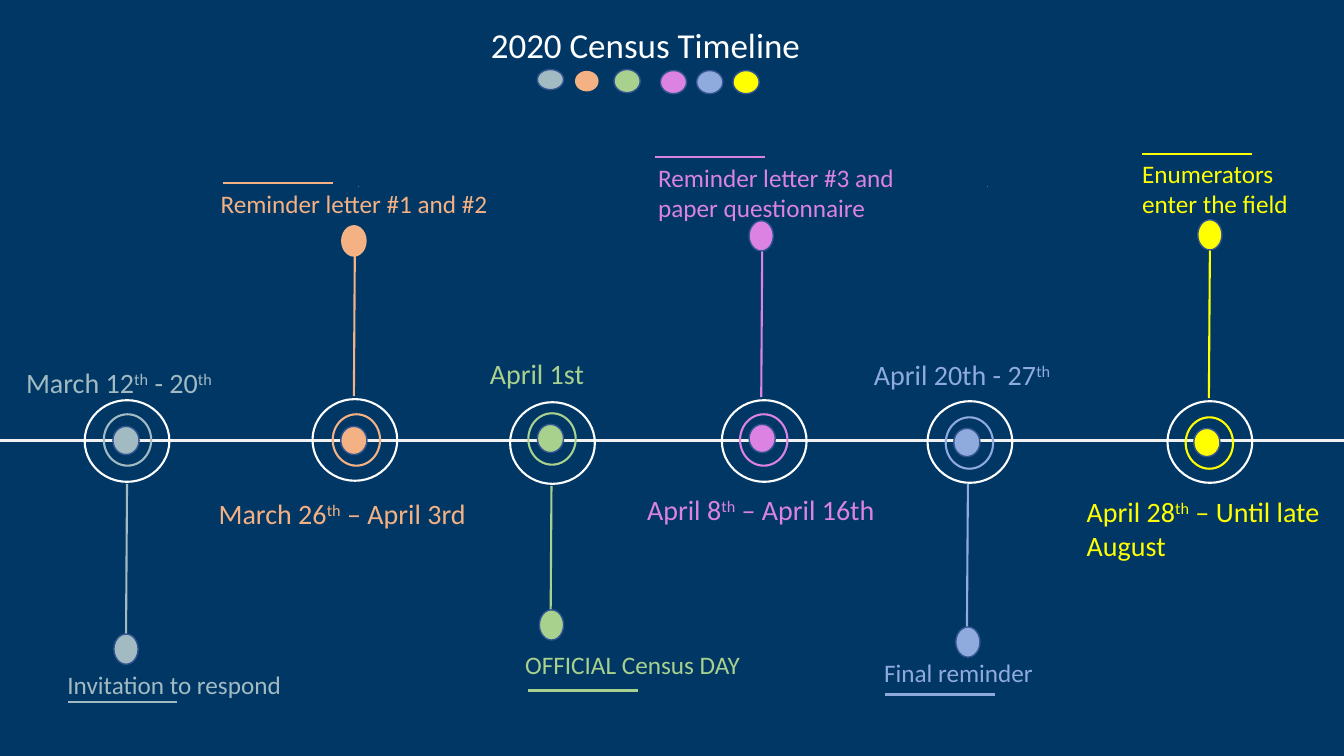
from dataclasses import dataclass
from typing import NamedTuple

from lxml import etree
from pptx import Presentation
from pptx.dml.color import RGBColor
from pptx.enum.shapes import MSO_CONNECTOR, MSO_SHAPE
from pptx.enum.text import MSO_AUTO_SIZE, PP_ALIGN
from pptx.oxml.ns import qn
from pptx.util import Inches, Pt

ELLIPSE, ARC = MSO_SHAPE.OVAL, MSO_SHAPE.ARC
STRAIGHT = MSO_CONNECTOR.STRAIGHT
GROW = MSO_AUTO_SIZE.SHAPE_TO_FIT_TEXT
LEFT, CENTER = PP_ALIGN.LEFT, PP_ALIGN.CENTER

NAVY = RGBColor(0x01, 0x37, 0x65)
WHITE = RGBColor(0xFF, 0xFF, 0xFF)
PALE = RGBColor(0xF2, 0xF2, 0xF2)
OUTLINE = RGBColor(0x32, 0x54, 0x91)
ARC_BLUE = RGBColor(0x44, 0x72, 0xC4)
GREY = RGBColor(0xA2, 0xBB, 0xC2)
PEACH = RGBColor(0xF4, 0xB1, 0x83)
GREEN = RGBColor(0xA9, 0xD1, 0x8E)
PINK = RGBColor(0xDB, 0x82, 0xE2)
PERIWINKLE = RGBColor(0x8F, 0xAA, 0xDC)
YELLOW = RGBColor(0xFF, 0xFF, 0x00)

COLUMNS, ROWS = 133.3, 75
SLIDE_WIDTH, SLIDE_HEIGHT = Inches(13.33), Inches(7.5)
COLUMN, ROW = SLIDE_WIDTH / COLUMNS, SLIDE_HEIGHT / ROWS


class Point(NamedTuple):
    column: float
    row: float


class Area(NamedTuple):
    column: float
    row: float
    columns: float
    rows: float


class Size(NamedTuple):
    columns: float
    rows: float


RING, BAND, CORE, PIN = Size(8.4, 8.1), Size(4.7, 5.1), Size(2.6, 2.8), Size(2.4, 3)
STEM, ACCENT = Size(-0.1, 15), Size(10.9, 0)
AXIS_ROW = 43.7


@dataclass(frozen=True)
class Milestone:
    """One date on the axis; text between carets is superscript."""
    colour: RGBColor
    ring: Point
    band: Point
    core: Point
    stem: Point
    pin: Point
    accent: Point
    date: str
    date_area: Area
    event: str
    event_area: Area
    legend_dot: Area
    dot_outline: RGBColor = OUTLINE


MILESTONES = [
    Milestone(GREY, Point(8.4, 39.7), Point(10.3, 41.1), Point(11.2, 42.3),
              Point(12.6, 48), Point(11.3, 62.9), Point(6.7, 69.6),
              "March 12^th^ - 20^th", Area(1.6, 35.8, 38.7, 4.4),
              "Invitation to respond", Area(5.7, 65.9, 25.3, 4),
              Area(53.3, 6.9, 2.6, 2)),
    Milestone(PEACH, Point(31, 39.6), Point(33, 41.1), Point(33.8, 42.3),
              Point(35.2, 24.3), Point(33.9, 22.4), Point(22.1, 18.2),
              "March 26^th^ – April 3rd", Area(20.7, 48.8, 38.3, 4.4),
              "Reminder letter #1 and #2", Area(20.9, 18.2, 41.4, 4),
              Area(57.1, 7.1, 2.2, 1.9), PEACH),
    Milestone(GREEN, Point(50.6, 39.9), Point(52.4, 41), Point(53.3, 42.1),
              Point(54.7, 48.2), Point(53.5, 60.5), Point(52.4, 68.5),
              "April 1st", Area(47.6, 34.9, 43.9, 4.4),
              "OFFICIAL Census DAY", Area(51.1, 63.9, 48.2, 4),
              Area(60.9, 6.9, 2.6, 2.3)),
    Milestone(PINK, Point(71.6, 39.7), Point(73.4, 41.1), Point(74.3, 42.1),
              Point(75.6, 24.4), Point(74.3, 21.9), Point(65, 15.6),
              "April 8^th^ – April 16th", Area(63.2, 48.4, 37.6, 4.4),
              "Reminder letter #3 and paper questionnaire", Area(64.3, 15.6, 25.6, 7.1),
              Area(65.5, 7, 2.6, 2.3)),
    Milestone(PERIWINKLE, Point(92, 39.8), Point(93.8, 41.4), Point(94.6, 42.5),
              Point(96, 48), Point(94.8, 62.2), Point(87.8, 68.9),
              "April 20th - 27^th", Area(85.7, 35, 38.7, 4.4),
              "Final reminder", Area(86.7, 64.7, 25.3, 4),
              Area(69.1, 7, 2.6, 2.3)),
    Milestone(YELLOW, Point(115.8, 39.8), Point(117.6, 41.4), Point(118.4, 42.5),
              Point(120, 24.5), Point(118.8, 21.8), Point(113.3, 15.3),
              "April 28^th^ – Until late August", Area(106.8, 48.6, 25.9, 7.7),
              "Enumerators enter the field", Area(112.3, 15.2, 19.6, 7.1),
              Area(72.7, 7, 2.6, 2.3)),
]
ARC_AREAS = [Area(column, 18.5, 8, 4.7) for column in (31.5, 65.1, 93.9)]


def to_lengths(area: Area) -> tuple[int, int, int, int]:
    return (round(area.column * COLUMN), round(area.row * ROW),
            round(area.columns * COLUMN), round(area.rows * ROW))


def add_outline(page, kind, area: Area, line: RGBColor, width: float, fill=None):
    shape = page.shapes.add_shape(kind, *to_lengths(area))
    shape.shadow.inherit = False
    if fill is None:
        shape.fill.background()
    else:
        shape.fill.solid()
        shape.fill.fore_color.rgb = fill
    shape.line.color.rgb = line
    shape.line.width = Pt(width)
    return shape


def add_line(page, start: Point, size: Size, colour: RGBColor) -> None:
    left, top, width, height = to_lengths(Area(*start, *size))
    line = page.shapes.add_connector(STRAIGHT, left, top, left + width, top + height)
    line.line.color.rgb = colour
    line.line.width = Pt(1.5)
    etree.SubElement(line._element.spPr, qn("a:effectLst"))


def add_label(page, text: str, area: Area, size: float, colour: RGBColor,
              alignment=LEFT) -> None:
    box = page.shapes.add_textbox(*to_lengths(area))
    for name, value in {"word_wrap": True, "auto_size": GROW}.items():
        setattr(box.text_frame, name, value)
    para = box.text_frame.paragraphs[0]
    para.alignment = alignment
    for index, part in enumerate(text.split("^")):
        span = para.add_run()
        span.text = part
        for name, value in {"name": "Calibri", "size": Pt(size)}.items():
            setattr(span.font, name, value)
        span.font.color.rgb = colour
        if index % 2:
            span._r.get_or_add_rPr().set("baseline", "30000")


def add_milestone(page, item: Milestone) -> None:
    add_outline(page, ELLIPSE, Area(*item.band, *BAND), item.colour, 1.5)
    add_outline(page, ELLIPSE, Area(*item.core, *CORE), OUTLINE, 1, item.colour)
    add_outline(page, ELLIPSE, Area(*item.ring, *RING), WHITE, 1.5)
    add_line(page, item.stem, STEM, item.colour)
    add_outline(page, ELLIPSE, Area(*item.pin, *PIN), item.dot_outline, 1, item.colour)
    add_label(page, item.date, item.date_area, 20, item.colour)
    add_label(page, item.event, item.event_area, 18, item.colour)
    add_line(page, item.accent, ACCENT, item.colour)
    add_outline(page, ELLIPSE, item.legend_dot, item.dot_outline, 1, item.colour)


def main() -> None:
    deck = Presentation()
    deck.slide_width, deck.slide_height = SLIDE_WIDTH, SLIDE_HEIGHT
    page = deck.slides.add_slide(deck.slide_layouts[6])
    page.background.fill.solid()
    page.background.fill.fore_color.rgb = NAVY

    add_line(page, Point(0, AXIS_ROW), Size(COLUMNS, 0), PALE)
    for area in ARC_AREAS:
        arc = add_outline(page, ARC, area, ARC_BLUE, 0.5)
        arc.adjustments[0], arc.adjustments[1] = 162, 163.01
    add_label(page, "2020 Census Timeline", Area(37.6, 1.8, 52.8, 5.2), 25, WHITE, CENTER)
    for item in MILESTONES:
        add_milestone(page, item)
    deck.save("out.pptx")


if __name__ == "__main__":
    main()
